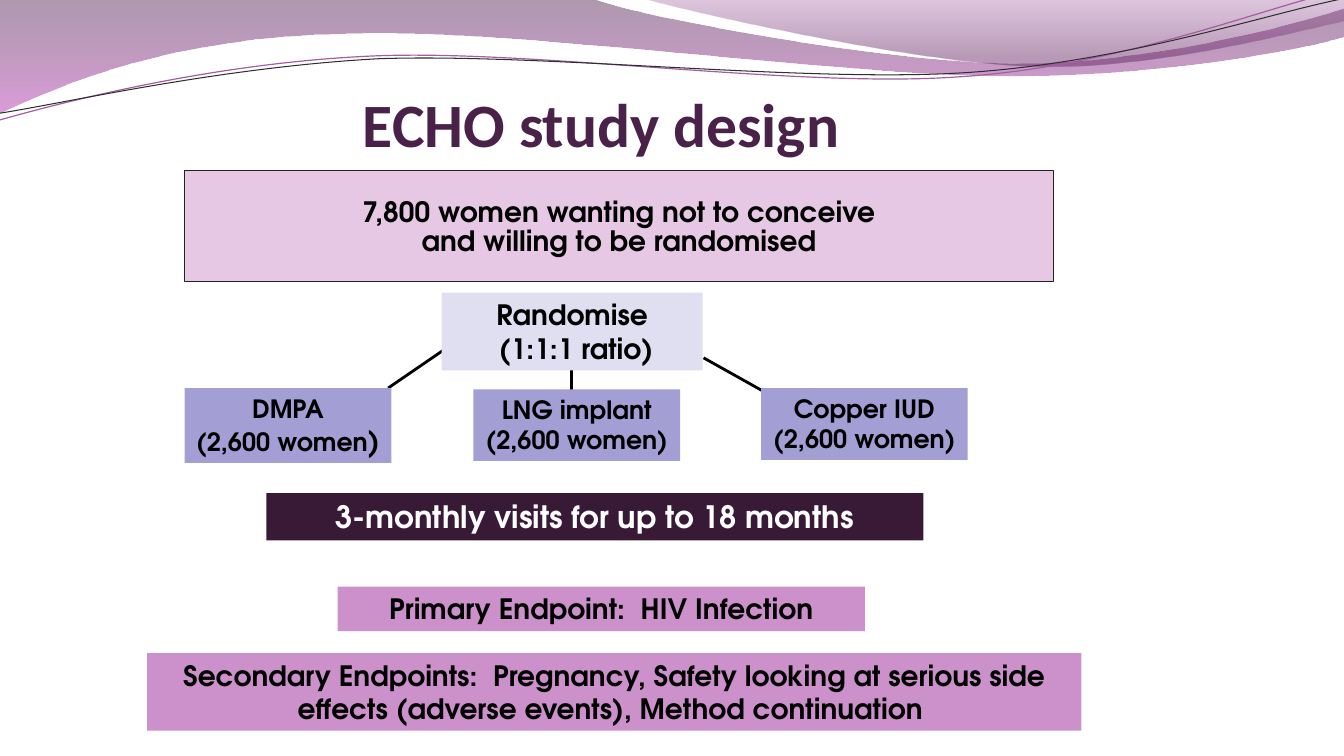
from lxml.etree import SubElement
from pptx import Presentation
from pptx.dml.color import RGBColor
from pptx.enum.shapes import MSO_CONNECTOR, MSO_SHAPE
from pptx.enum.text import MSO_ANCHOR, MSO_AUTO_SIZE, PP_ALIGN
from pptx.oxml.ns import qn
from pptx.util import Pt


def colour(value):
    return RGBColor.from_string(value)


def bend(outline, segments):
    corners = list(outline.iter(qn("a:lnTo")))
    for segment in segments:
        group, corners = corners[:len(segment) // 2], corners[len(segment) // 2:]
        if len(group) == 3:
            group[0].tag = qn("a:cubicBezTo")
            for corner in group[1:]:
                group[0].append(corner[0])
                corner.getparent().remove(corner)


deck = Presentation()
deck.slide_width, deck.slide_height = Pt(960), Pt(540)
page = deck.slides.add_slide(deck.slide_layouts[6])

waves = [
    ((-1, 0), [(423, -1), (456, 12, 636, 45, 728, 45), (819, 45, 919, 19, 960, 6), (960, 26),
               (944, 32, 834, 55, 716, 54), (597, 54, 366, 20, 247, 24),
               (123, 26, 44, 60, -1, 81)],
     [(0, "4D1E4C", 45), (1, "BC4BBA", 55)], None),
    ((459, -1), [(489, 8, 654, 45, 738, 47), (821, 50, 923, 23, 960, 15), (960, 0)],
     [(0, "924591", 30), (0.8, "611F5F", 45)], None),
    ((-2.6, 63.3), [(44, 52.5, 151.2, 29.6, 266.3, 30), (379.4, 30.3, 566.9, 67.2, 682.2, 64.6),
                    (798.4, 63.1, 902.2, 25.9, 959.8, 15.7)], None, ("A35DA2", 0.85)),
    ((-2.3, 58.3), [(44, 53.5, 157.1, 32.8, 271.2, 32.1), (387.3, 33.6, 572.1, 63.4, 687.3, 61.8),
                    (801.5, 60.2, 905, 30, 961.5, 21.6)], None, ("2F2F2F", 0.75)),
]
for start, segments, stops, outline in waves:
    builder = page.shapes.build_freeform(*[Pt(length) for length in start])
    corners = [(Pt(x), Pt(y)) for segment in segments
               for x, y in zip(segment[::2], segment[1::2])]
    builder.add_line_segments(corners, close=stops is not None)
    wave = builder.convert_to_shape()
    bend(wave._element, segments)
    wave.shadow.inherit = False
    if stops:
        wave.line.fill.background()
        wave.fill.gradient()
        wave.fill.gradient_angle = 270
        for stop, (position, value, opacity) in zip(wave.fill.gradient_stops, stops):
            stop.position = position
            stop.color.rgb = colour(value)
        for tint, (position, value, opacity) in zip(wave._element.iter(qn("a:srgbClr")), stops):
            SubElement(tint, qn("a:alpha")).set("val", str(opacity * 1000))
    else:
        wave.rotation = 357.3
        wave.fill.background()
        wave.line.color.rgb = colour(outline[0])
        wave.line.width = Pt(outline[1])

title = page.shapes.add_textbox(Pt(259.2), Pt(48.24), Pt(700.8), Pt(66.24))
frame = title.text_frame
frame_format = {"word_wrap": True, "vertical_anchor": MSO_ANCHOR.BOTTOM, "margin_left": 0,
                "margin_right": 0, "margin_top": Pt(3.6), "margin_bottom": 0}
for name, value in frame_format.items():
    setattr(frame, name, value)
span = frame.paragraphs[0].add_run()
span.text = "ECHO study design"
for name, value in {"name": "Calibri", "size": Pt(44), "bold": True}.items():
    setattr(span.font, name, value)
span.font.color.rgb = colour("4A2249")

branches = [(408.24, 242.64, 408.24, 288), (318.24, 249.12, 277.2, 277.2),
            (502.56, 255.6, 545.04, 279.36)]
for ends in branches:
    branch = page.shapes.add_connector(MSO_CONNECTOR.STRAIGHT, *[Pt(end) for end in ends])
    branch.line.color.rgb = colour("000000")
    branch.line.width = Pt(2)
    SubElement(branch._element.spPr, qn("a:effectLst"))

boxes = {
    "participants": ((131.76, 121.9, 620.64, 79.2), "E6C8E5", 20, "000000",
                     ["7,800 women wanting not to conceive", "and willing to be randomised"]),
    "injection": ((131.9, 277.3, 147.6, 53.28), "A39ED4", 18, "000000",
                  ["DMPA", "(2,600 women"]),
    "implant": ((338.2, 278.1, 147.6, 51.12), "A39ED4", 18, "000000",
                ["LNG implant", "(2,600 women)"]),
    "device": ((543.6, 277.3, 147.6, 51.12), "A39ED4", 18, "000000",
               ["Copper IUD", "(2,600 women)"]),
    "visits": ((190.2, 352.2, 469.44, 33.84), "381A37", 22, "FFFFFF",
               ["3-monthly visits for up to 18 months"]),
    "primary": ((241.2, 419.1, 376.56, 31.68), "CC91CB", 20, "000000",
                ["Primary Endpoint:  HIV Infection"]),
    "secondary": ((105.1, 466.5, 667.44, 55.44), "CC91CB", 20, "000000",
                  ["Secondary Endpoints:  Pregnancy, Safety looking at serious side effects "
                   "(adverse events), Method continuation "]),
    "randomise": ((315.5, 209.1, 186.48, 55.44), "E0DFF1", 20, "000000",
                  ["Randomise\n (1:1:1 ratio)"]),
}
for key, (place, fill, size, ink, lines) in boxes.items():
    box = page.shapes.add_shape(MSO_SHAPE.RECTANGLE, *[Pt(length) for length in place])
    box.shadow.inherit = False
    box.fill.solid()
    box.fill.fore_color.rgb = colour(fill)
    frame = box.text_frame
    frame.word_wrap = True
    if key == "participants":
        box.line.color.rgb = colour("232323")
        box.line.width = Pt(1)
        frame.vertical_anchor = MSO_ANCHOR.MIDDLE
    else:
        box.line.fill.background()
        frame.vertical_anchor = MSO_ANCHOR.TOP
        frame.auto_size = MSO_AUTO_SIZE.SHAPE_TO_FIT_TEXT
    for index, line in enumerate(lines):
        para = frame.add_paragraph() if index else frame.paragraphs[0]
        para.alignment = PP_ALIGN.CENTER
        if key == "participants" and index:
            para.line_spacing = 0.9
        spans = [(words, size) for words in line.split("\n")]
        if key == "injection" and index:
            spans.append((")", 20))
        for order, (words, points) in enumerate(spans):
            if order and "\n" in line:
                para.add_line_break()
            span = para.add_run()
            span.text = words
            text_format = {"name": "TeX Gyre Adventor", "size": Pt(points), "bold": True}
            for name, value in text_format.items():
                setattr(span.font, name, value)
            span.font.color.rgb = colour(ink)

deck.save("out.pptx")
